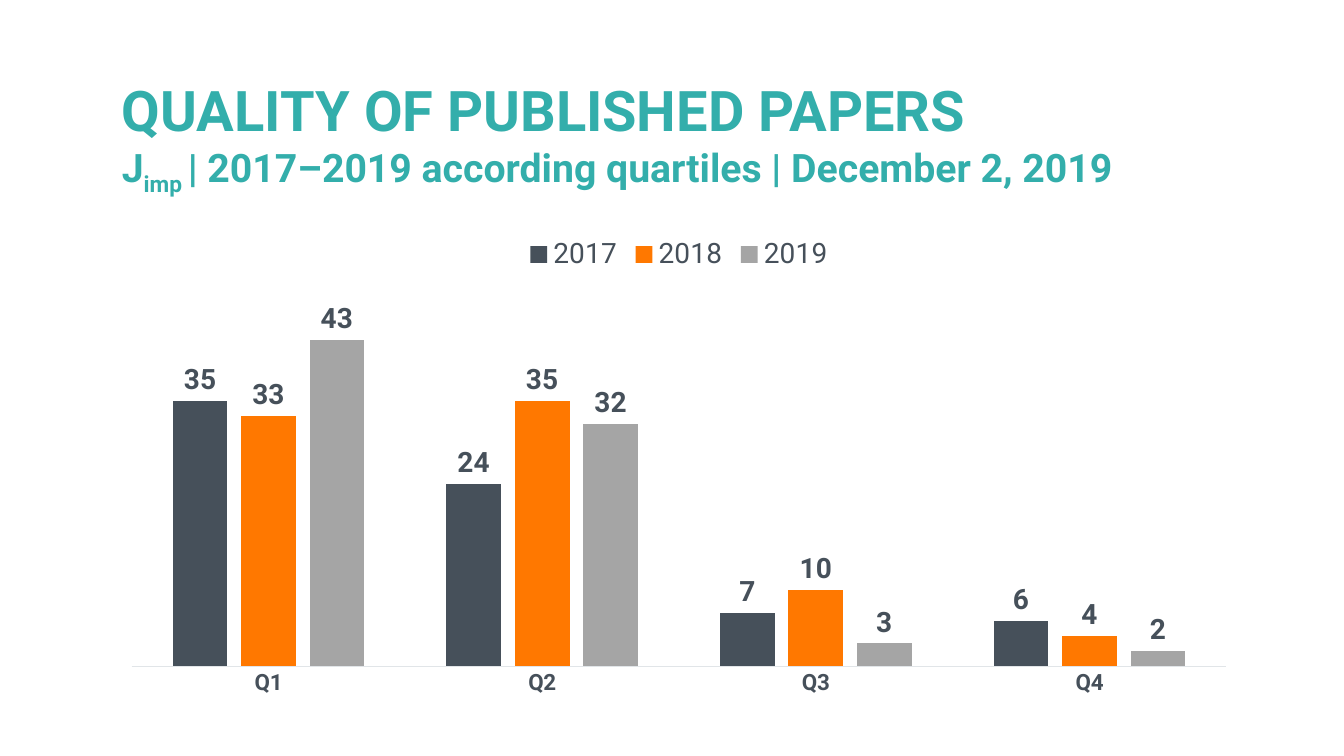
import pptx
import pptx.chart.data
import pptx.dml.color
import pptx.enum.chart
import pptx.enum.text
import pptx.oxml
import pptx.oxml.ns
import pptx.util

RGBColor = pptx.dml.color.RGBColor
TEAL = RGBColor(0x33, 0xAE, 0xAB)
SLATE = RGBColor(0x46, 0x50, 0x5A)
ORANGE = RGBColor(0xFF, 0x78, 0x00)
GREY = RGBColor(0xA5, 0xA5, 0xA5)
PALE_GREY = RGBColor(0xE1, 0xE5, 0xE8)
FONT = "Roboto"

SLIDE_WIDTH = pptx.util.Inches(13.33)
SLIDE_HEIGHT = pptx.util.Inches(7.5)
TEXT_LEFT = 1.11
CONTENT_WIDTH = 11.31

QUARTILES = ["Q1", "Q2", "Q3", "Q4"]
PAPERS_BY_YEAR = [
    ("2017", [35, 24, 7, 6], SLATE),
    ("2018", [33, 35, 10, 4], ORANGE),
    ("2019", [43, 32, 3, 2], GREY),
]
# Inner plot area as shares of the chart's size
PLOT_SHARES = {"x": 0.02, "y": 0.13, "w": 0.96, "h": 0.79}


def box(left, top, width, height):
    """Turn inches into the four lengths of a shape."""
    return [pptx.util.Inches(length) for length in (left, top, width, height)]


def set_font(font, size, color, bold=False):
    font.name = FONT
    font.size = pptx.util.Pt(size)
    font.bold = bold
    font.color.rgb = color


def add_title(slide, text):
    title = slide.shapes.title
    title.left, title.top, title.width, title.height = box(
        TEXT_LEFT, 0.4, CONTENT_WIDTH, 1.45)
    frame = title.text_frame
    frame.text = text
    frame.auto_size = pptx.enum.text.MSO_AUTO_SIZE.NONE
    frame.vertical_anchor = pptx.enum.text.MSO_ANCHOR.MIDDLE
    paragraph = frame.paragraphs[0]
    paragraph.alignment = pptx.enum.text.PP_ALIGN.LEFT
    paragraph.line_spacing = 0.9
    set_font(paragraph.font, 40, TEAL, bold=True)


def add_subtitle(slide, pieces):
    """Add one line of (text, is_subscript) pieces."""
    shape = slide.shapes.add_textbox(*box(TEXT_LEFT, 1.4, CONTENT_WIDTH, 0.57))
    frame = shape.text_frame
    frame.word_wrap = True
    frame.vertical_anchor = pptx.enum.text.MSO_ANCHOR.MIDDLE
    paragraph = frame.paragraphs[0]
    set_font(paragraph.font, 28, TEAL, bold=True)
    for text, is_subscript in pieces:
        run = paragraph.add_run()
        run.text = text
        set_font(run.font, 28, TEAL, bold=True)
        if is_subscript:
            run._r.get_or_add_rPr().set("baseline", "-25000")


def place_plot_area(chart):
    plot_area = chart._chartSpace.chart.plotArea
    for layout in plot_area.findall(pptx.oxml.ns.qn("c:layout")):
        plot_area.remove(layout)
    shares = "".join(f'<c:{key} val="{share}"/>' for key, share in PLOT_SHARES.items())
    plot_area.insert(0, pptx.oxml.parse_xml(
        f'<c:layout {pptx.oxml.ns.nsdecls("c")}><c:manualLayout>'
        '<c:layoutTarget val="inner"/><c:xMode val="edge"/><c:yMode val="edge"/>'
        f'{shares}</c:manualLayout></c:layout>'))


def format_axes(chart):
    quartile_axis = chart.category_axis
    quartile_axis.major_tick_mark = pptx.enum.chart.XL_TICK_MARK.NONE
    quartile_axis.format.line.color.rgb = PALE_GREY
    quartile_axis.format.line.width = pptx.util.Pt(0.75)
    set_font(quartile_axis.tick_labels.font, 16, SLATE, bold=True)
    count_axis = chart.value_axis
    count_axis.visible = False
    count_axis.has_major_gridlines = False
    count_axis.minimum_scale = 0
    count_axis.maximum_scale = 50


def add_quartile_chart(slide):
    data = pptx.chart.data.CategoryChartData()
    data.categories = QUARTILES
    for year, counts, _ in PAPERS_BY_YEAR:
        data.add_series(year, counts)
    chart = slide.shapes.add_chart(
        pptx.enum.chart.XL_CHART_TYPE.COLUMN_CLUSTERED,
        *box(1.08, 2.23, CONTENT_WIDTH, 4.76), data).chart
    chart.has_title = False
    set_font(chart.font, 10, SLATE)
    format_axes(chart)
    place_plot_area(chart)

    # Legend
    chart.has_legend = True
    chart.legend.position = pptx.enum.chart.XL_LEGEND_POSITION.TOP
    chart.legend.include_in_layout = False
    set_font(chart.legend.font, 20, SLATE)

    # Columns and their labels
    plot = chart.plots[0]
    plot.gap_width = 150
    plot.overlap = -25
    plot.vary_by_categories = False
    for series, (_, _, color) in zip(plot.series, PAPERS_BY_YEAR):
        series.format.fill.solid()
        series.format.fill.fore_color.rgb = color
        labels = series.data_labels
        labels.show_value = True
        labels.position = pptx.enum.chart.XL_LABEL_POSITION.OUTSIDE_END
        set_font(labels.font, 20, SLATE, bold=True)


def main():
    presentation = pptx.Presentation()
    presentation.slide_width = SLIDE_WIDTH
    presentation.slide_height = SLIDE_HEIGHT
    title_only = presentation.slide_layouts.get_by_name("Title Only")
    slide = presentation.slides.add_slide(title_only)

    add_title(slide, "QUALITY OF PUBLISHED PAPERS")
    add_subtitle(slide, [
        ("J", False),
        ("imp ", True),
        ("| 2017–2019 according quartiles | December 2, 2019", False),
    ])
    add_quartile_chart(slide)
    presentation.save("out.pptx")


if __name__ == "__main__":
    main()
